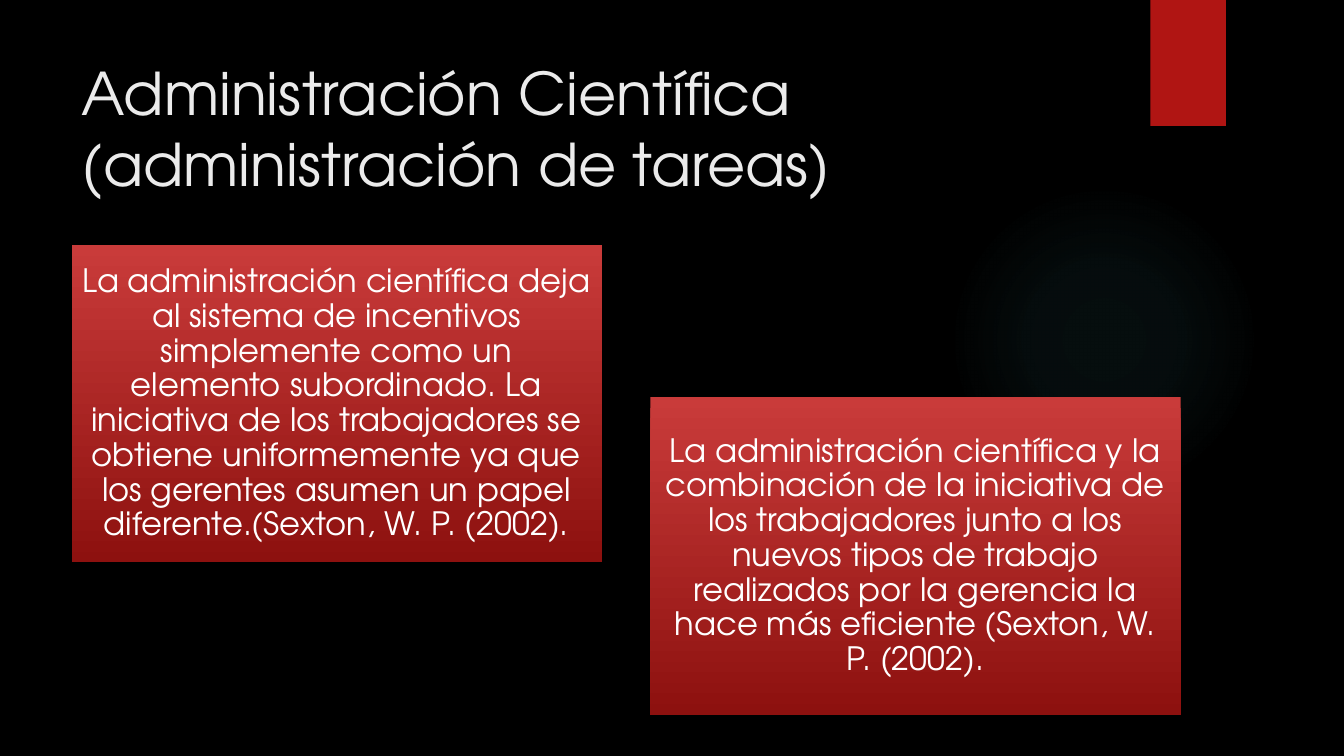
"""Builds the slide on scientific management with two staggered cards."""
from pptx import Presentation, util as u
from pptx.dml.color import RGBColor
from pptx.enum import shapes, text
from pptx.oxml import parse_xml
from pptx.oxml.ns import nsdecls

FONT = "TeX Gyre Adventor"


def paint(color, code):
    color.rgb = RGBColor.from_string(code)


def add(kind, *place):
    shape = slide.shapes.add_shape(kind, *[u.Inches(n) for n in place])
    shape.shadow.inherit = False
    shape.line.fill.background()
    return shape


deck = Presentation()
deck.slide_width, deck.slide_height = u.Inches(13.33), u.Inches(7.5)
slide = deck.slides.add_slide(deck.slide_layouts[6])
back = slide.background.fill
back.solid()
paint(back.fore_color, "000000")

glow = add(shapes.MSO_SHAPE.OVAL, 9.41, 1.83, 3.08, 3.08)
stops = "".join(
    f'<a:gs pos="{pos}000"><a:srgbClr val="50B9C1"><a:alpha val="{alpha}000"/></a:srgbClr></a:gs>'
    for pos, alpha in [(0, 7), (36, 6), (69, 0), (100, 0)])
glow._element.spPr.prstGeom.addnext(parse_xml(
    f'<a:gradFill {nsdecls("a")}><a:gsLst>{stops}</a:gsLst><a:path path="circle">'
    '<a:fillToRect l="50000" t="50000" r="50000" b="50000"/></a:path></a:gradFill>'))

tab = add(shapes.MSO_SHAPE.RECTANGLE, 11.41, 0, 0.75, 1.25)
tab.fill.solid()
paint(tab.fill.fore_color, "B01513")

title = slide.shapes.add_textbox(
    u.Inches(0.71), u.Inches(0.5), u.Inches(10.29), u.Inches(1.53))
frame = title.text_frame
frame.word_wrap = True
frame.vertical_anchor = text.MSO_ANCHOR.MIDDLE
frame.text = "Administración Científica (administración de tareas)"
font = frame.paragraphs[0].runs[0].font
font.name, font.size = FONT, u.Pt(42)
paint(font.color, "EBEBEB")

cards = [
    (0.71, 2.43, "La administración científica deja al sistema de incentivos "
     "simplemente como un elemento subordinado. La iniciativa de los "
     "trabajadores se obtiene uniformemente ya que los gerentes asumen un "
     "papel diferente.(Sexton, W. P. (2002)."),
    (6.45, 3.94, "La administración científica y la combinación de la "
     "iniciativa de los trabajadores junto a los nuevos tipos de trabajo "
     "realizados por la gerencia la hace más eficiente (Sexton, W. P. (2002)."),
]
for left, top, words in cards:
    card = add(shapes.MSO_SHAPE.RECTANGLE, left, top, 5.26, 3.15)
    card.fill.gradient()
    card.fill.gradient_angle = 270
    for stop, pos, code in zip(card.fill.gradient_stops, (0, 1), ("C93B3A", "8D110F")):
        stop.position = pos
        paint(stop.color, code)
    frame = card.text_frame
    frame.word_wrap = True
    frame.vertical_anchor = text.MSO_ANCHOR.MIDDLE
    frame.margin_left = frame.margin_right = u.Inches(0.1)
    frame.margin_top = frame.margin_bottom = u.Inches(0.1)
    frame.text = words
    para = frame.paragraphs[0]
    para.alignment = text.PP_ALIGN.CENTER
    para.line_spacing = 0.9
    font = para.runs[0].font
    font.name, font.size = FONT, u.Pt(23)
    paint(font.color, "FFFFFF")

deck.save("out.pptx")
